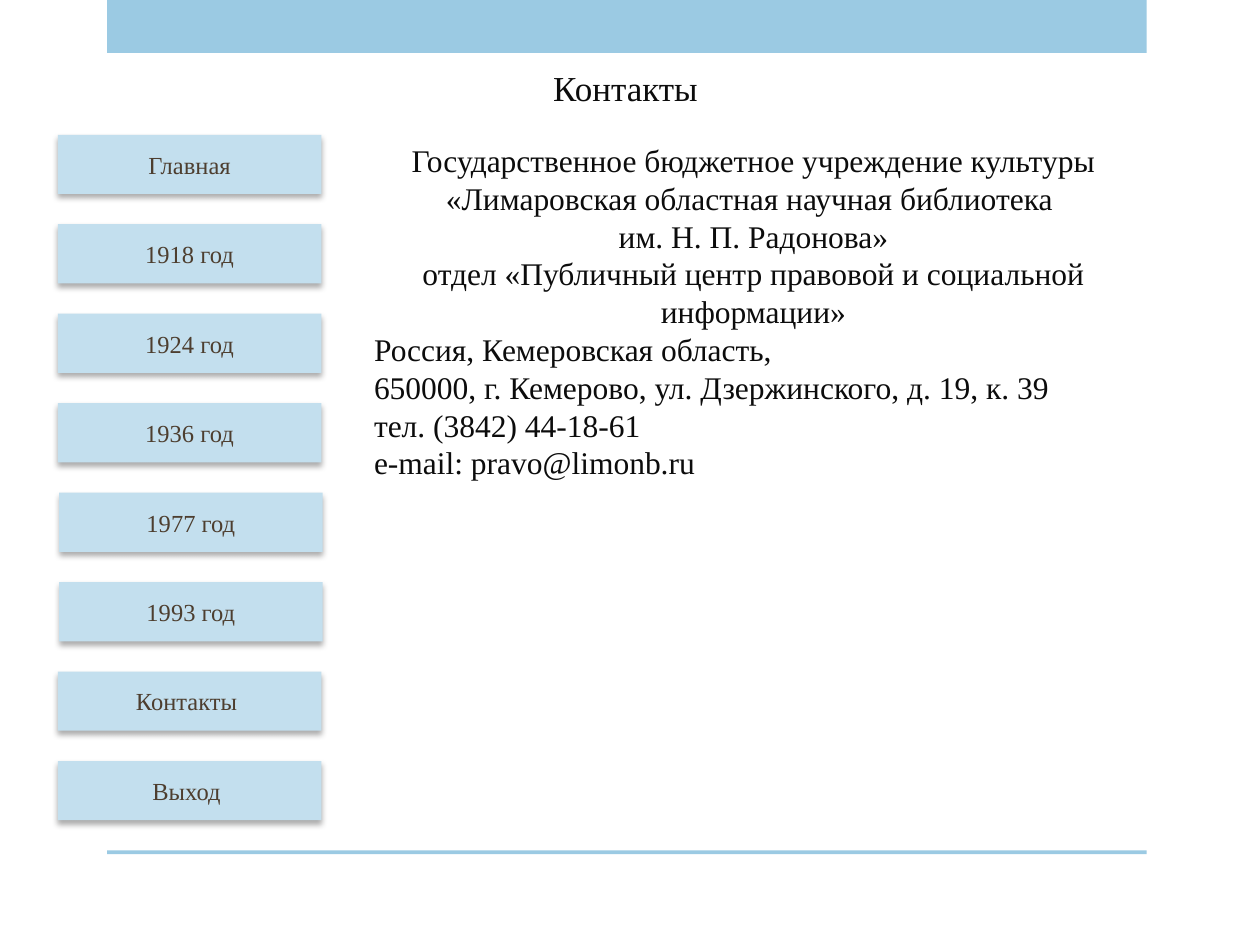
"""Build the contacts slide with its side menu."""
import pptx
import pptx.util
import pptx.dml.color
import pptx.enum.shapes
import pptx.enum.text
import pptx.oxml
import pptx.oxml.ns

Inches = pptx.util.Inches
Align = pptx.enum.text.PP_ALIGN
Anchor = pptx.enum.text.MSO_ANCHOR

COLORS = {"band": "9BCAE3", "button": "C3DFEE", "label": "4D3E2F", "text": "0C0C0C"}
FONT = "Times New Roman"
TITLE = "Контакты"
MENU = ["Главная", "1918 год", "1924 год", "1936 год", "1977 год", "1993 год",
        "Контакты ", "Выход "]
SHIFTED = {"1977 год", "1993 год"}
LIBRARY = ["Государственное бюджетное учреждение культуры",
           "«Лимаровская областная научная библиотека ",
           "им. Н. П. Радонова»",
           "отдел «Публичный центр правовой и социальной информации»"]
ADDRESS = ["Россия, Кемеровская область,",
           "650000, г. Кемерово, ул. Дзержинского, д. 19, к. 39",
           "тел. (3842) 44-18-61",
           "e-mail: pravo@limonb.ru"]
BANDS = [(0.85, 0, 8.25, 0.42), (0.85, 6.75, 8.25, 0.03)]
TOP, STEP = 1.07, 0.71
SHADOW = """<a:effectLst xmlns:a="http://schemas.openxmlformats.org/drawingml/2006/main">
<a:outerShdw blurRad="44450" dist="27940" dir="5400000" algn="ctr" rotWithShape="0">
<a:srgbClr val="000000"><a:alpha val="32000"/></a:srgbClr></a:outerShdw></a:effectLst>"""


def tint(name):
    return pptx.dml.color.RGBColor.from_string(COLORS[name])


def write(shape, lines, size, color="text", anchor=Anchor.TOP):
    frame = shape.text_frame
    frame.word_wrap = True
    frame.vertical_anchor = anchor
    for i, (text, align) in enumerate(lines):
        para = frame.add_paragraph() if i else frame.paragraphs[0]
        para.alignment = align
        run = para.add_run()
        run.text = text
        run.font.name = FONT
        run.font.size = pptx.util.Pt(size)
        run.font.color.rgb = tint(color)


def block(slide, box, color):
    shape = slide.shapes.add_shape(
        pptx.enum.shapes.MSO_SHAPE.RECTANGLE, *map(Inches, box))
    shape.fill.solid()
    shape.fill.fore_color.rgb = tint(color)
    shape.line.fill.background()
    shape.shadow.inherit = False
    return shape


def button(slide, label, row):
    left = 0.47 if label in SHIFTED else 0.46
    shape = block(slide, (left, TOP + row * STEP, 2.09, 0.47), "button")
    props = shape.element.spPr
    props.replace(props.find(pptx.oxml.ns.qn("a:effectLst")),
                  pptx.oxml.parse_xml(SHADOW))
    write(shape, [(label, Align.CENTER)], size=14, color="label", anchor=Anchor.MIDDLE)


def main():
    deck = pptx.Presentation()
    deck.slide_width, deck.slide_height = Inches(10), Inches(7.5)
    slide = deck.slides.add_slide(deck.slide_layouts[6])
    for box in BANDS:
        block(slide, box, "band")
    title = slide.shapes.add_textbox(*map(Inches, (0.83, 0.48, 8.27, 0.44)))
    write(title, [(TITLE, Align.CENTER)], size=20)
    for row, label in enumerate(MENU):
        button(slide, label, row)
    body = slide.shapes.add_textbox(*map(Inches, (2.87, TOP, 6.22, 2.83)))
    lines = [(text, Align.CENTER) for text in LIBRARY]
    lines += [(text, Align.LEFT) for text in ADDRESS]
    write(body, lines, size=18)
    deck.save("out.pptx")


if __name__ == "__main__":
    main()
